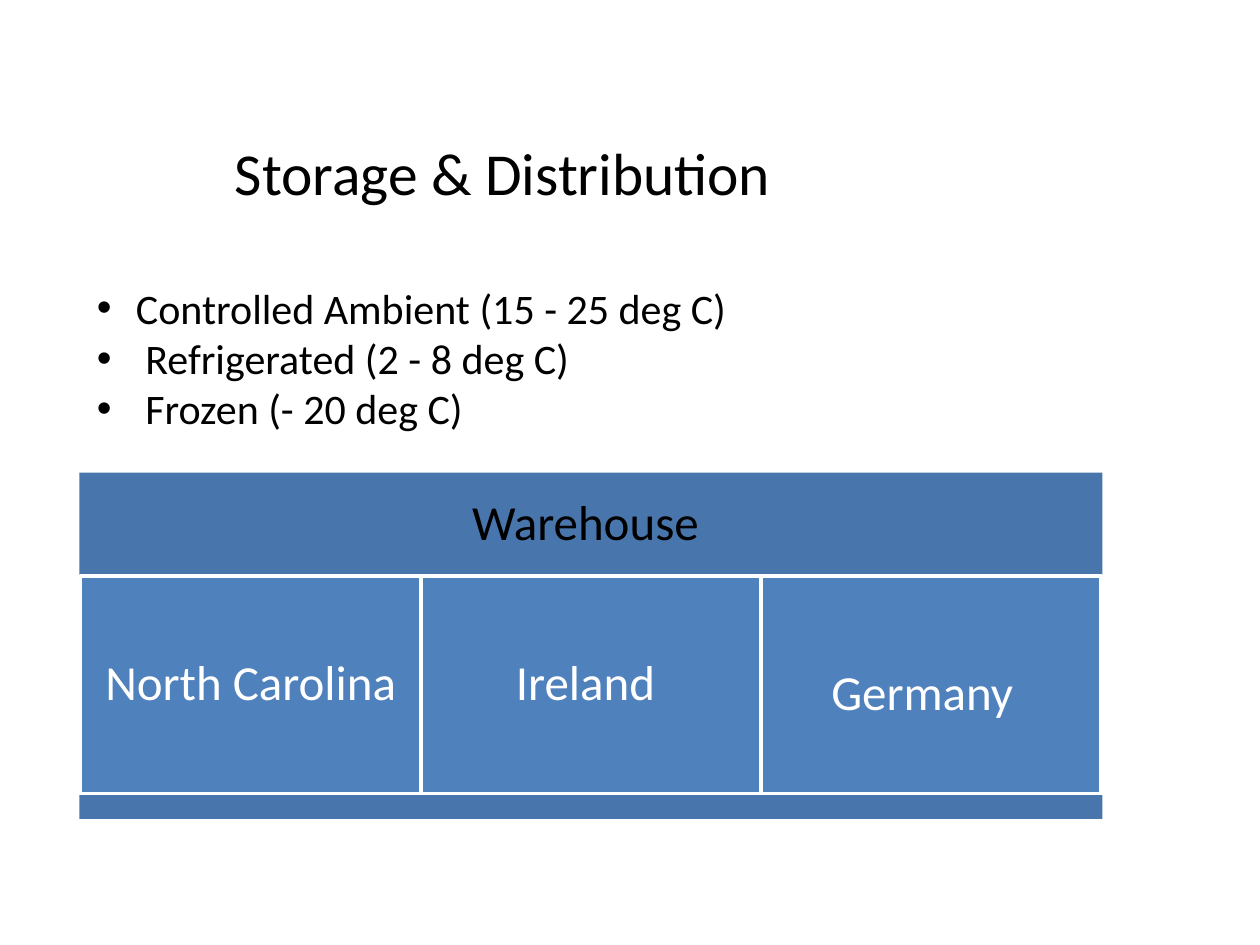
"""Builds the Storage & Distribution slide."""
from lxml.etree import SubElement
from pptx import Presentation
from pptx.dml.color import RGBColor
from pptx.enum.shapes import MSO_SHAPE as SHAPE
from pptx.enum.text import MSO_ANCHOR as ANCHOR, PP_ALIGN as ALIGN
from pptx.oxml.ns import qn
from pptx.util import Inches, Pt

BLACK = RGBColor(0x00, 0x00, 0x00)
WHITE = RGBColor(0xFF, 0xFF, 0xFF)
BAND = RGBColor(0x48, 0x75, 0xAC)
CELL = RGBColor(0x4F, 0x81, 0xBD)
FONT = "Calibri"

TITLE = "Storage & Distribution"
CONDITIONS = [
    "Controlled Ambient (15 - 25 deg C)",
    " Refrigerated (2 - 8 deg C)",
    " Frozen (- 20 deg C)",
]
HEADER = [("Warehouse ", 28)]
SITES = [
    [("North Carolina", 28)],
    [("Ireland ", 28)],
    [("Germany", 28), (" ", 45)],
]

BAND_X, BAND_W = 0.63, 8.12
HEADER_Y, HEADER_H = 3.75, 0.82
SITE_X, SITE_Y, SITE_W, SITE_H = 0.64, 4.57, 2.7, 1.73
FOOTER_Y, FOOTER_H = 6.31, 0.19


def set_margins(tf, inset):
    for side in ("left", "top", "right", "bottom"):
        setattr(tf, f"margin_{side}", Inches(inset))


def add_run(p, text, size, color):
    r = p.add_run()
    r.text = text
    for name, value in {"name": FONT, "size": Pt(size)}.items():
        setattr(r.font, name, value)
    r.font.color.rgb = color


def add_text(s, box):
    tf = s.shapes.add_textbox(*map(Inches, box)).text_frame
    tf.word_wrap = True
    return tf


def add_bullet(p):
    pPr = p._p.get_or_add_pPr()
    pPr.set("marL", str(Inches(0.31)))
    pPr.set("indent", str(-Inches(0.31)))
    SubElement(pPr, qn("a:buFont"), typeface="Arial")
    SubElement(pPr, qn("a:buChar"), char="•")


def add_block(s, box, fill, runs=(), color=WHITE, outlined=False):
    sp = s.shapes.add_shape(SHAPE.RECTANGLE, *map(Inches, box))
    sp.shadow.inherit = False
    sp.fill.solid()
    sp.fill.fore_color.rgb = fill
    if outlined:
        sp.line.color.rgb = WHITE
        sp.line.width = Pt(2)
    else:
        sp.line.fill.background()
    tf = sp.text_frame
    tf.word_wrap = True
    tf.vertical_anchor = ANCHOR.MIDDLE
    set_margins(tf, 0.12)
    p = tf.paragraphs[0]
    p.alignment = ALIGN.CENTER
    p.line_spacing = 0.9
    for text, size in runs:
        add_run(p, text, size, color)


def main():
    prs = Presentation()
    prs.slide_width, prs.slide_height = Inches(10), Inches(7.5)
    s = prs.slides.add_slide(prs.slide_layouts[6])

    tf = add_text(s, (-0.17, 1.08, 8.32, 0.57))
    set_margins(tf, 0)
    p = tf.paragraphs[0]
    p.alignment = ALIGN.CENTER
    add_run(p, TITLE, 34, BLACK)

    tf = add_text(s, (0.67, 2.19, 7.58, 1.31))
    for i, text in enumerate(CONDITIONS):
        p = tf.add_paragraph() if i else tf.paragraphs[0]
        add_bullet(p)
        add_run(p, text, 24, BLACK)

    add_block(s, (BAND_X, HEADER_Y, BAND_W, HEADER_H), BAND, HEADER, BLACK)
    for i, runs in enumerate(SITES):
        box = (SITE_X + i * SITE_W, SITE_Y, SITE_W, SITE_H)
        add_block(s, box, CELL, runs, outlined=True)
    add_block(s, (BAND_X, FOOTER_Y, BAND_W, FOOTER_H), BAND)

    prs.save("out.pptx")


if __name__ == "__main__":
    main()
